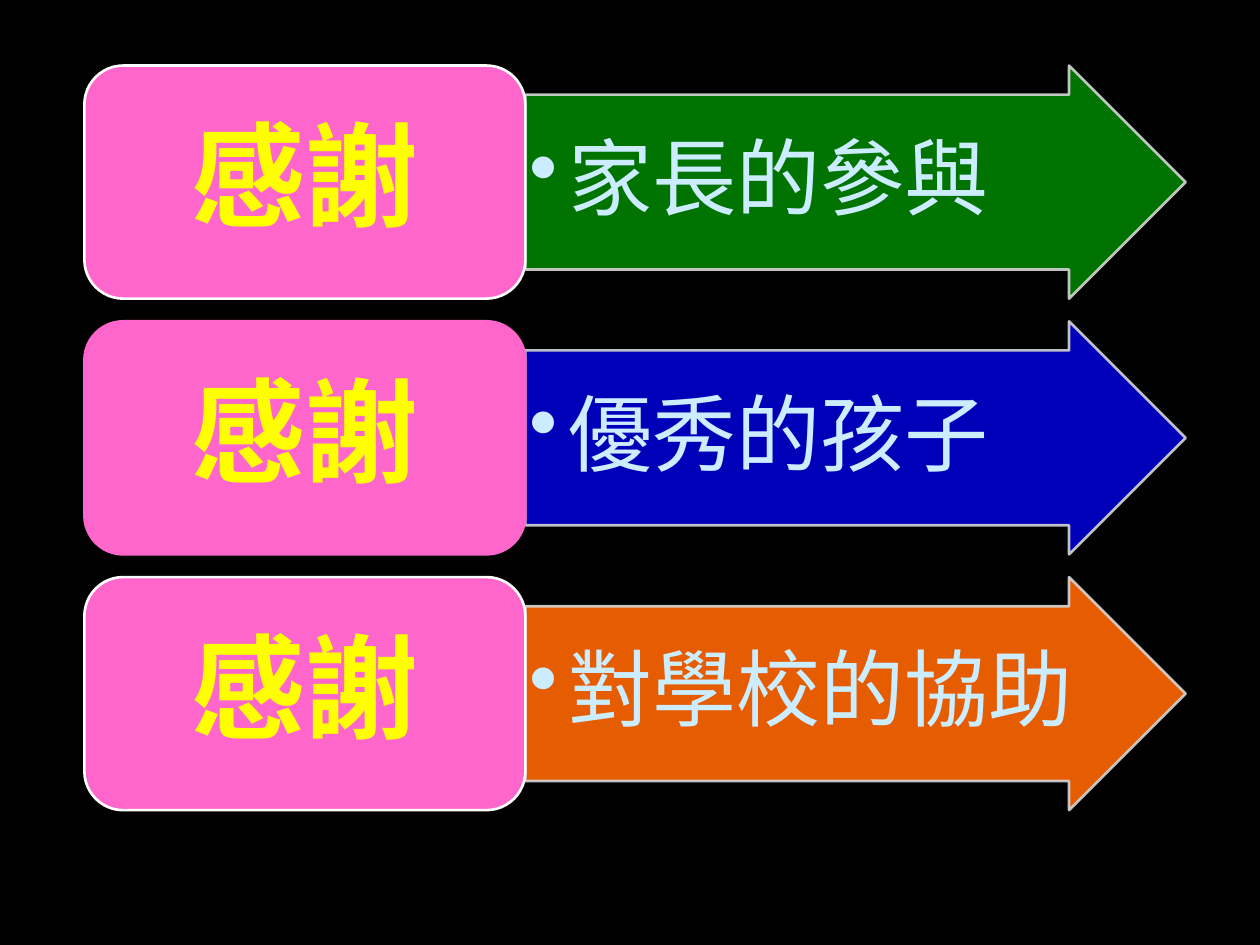
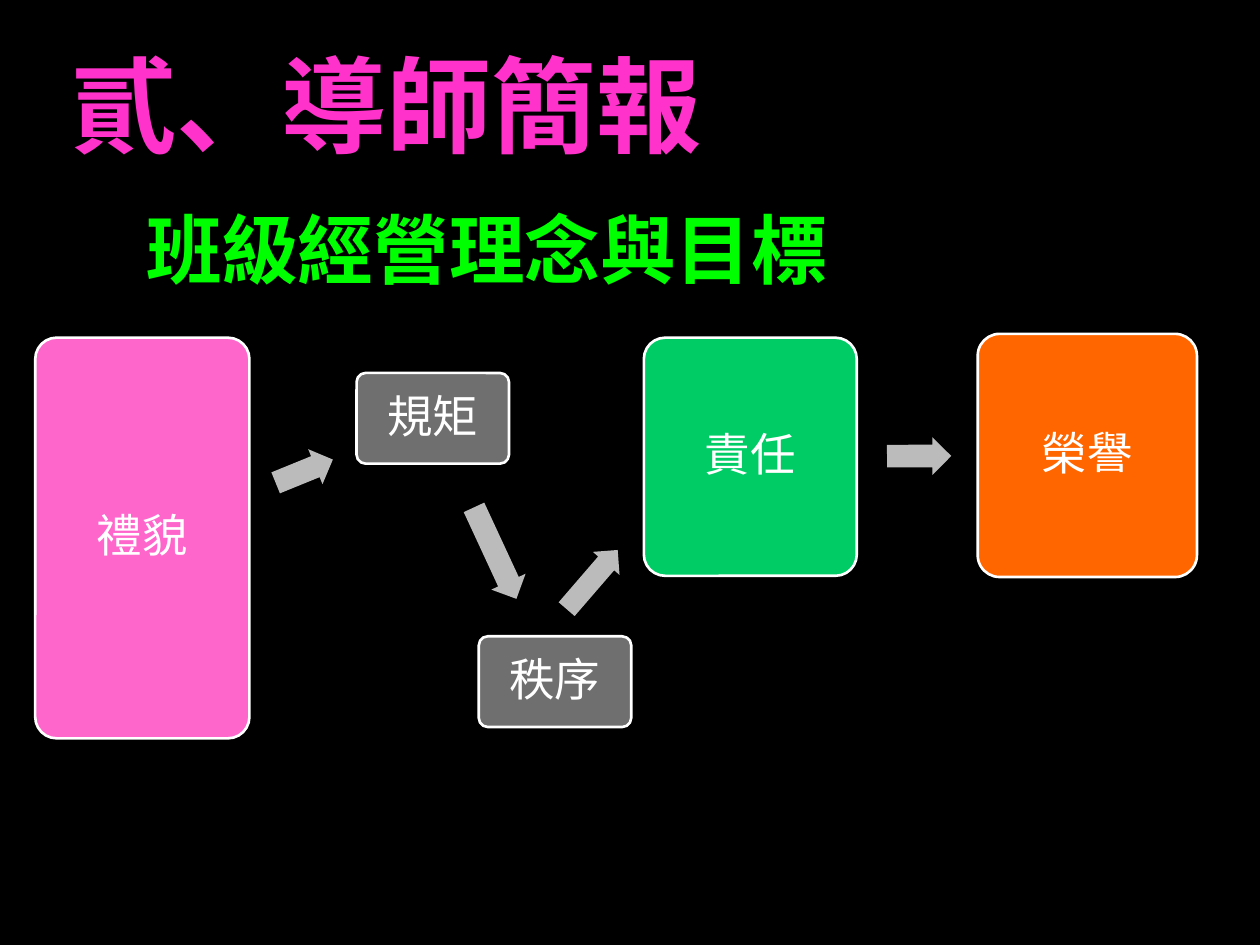
from dataclasses import dataclass

from lxml.etree import SubElement
from pptx import Presentation
from pptx.dml.color import RGBColor
from pptx.enum.shapes import MSO_SHAPE as Preset
from pptx.enum.text import MSO_ANCHOR as Anchor, PP_ALIGN as Align
from pptx.oxml.ns import qn
from pptx.util import Inches, Pt

DECK_WIDTH, DECK_HEIGHT = Inches(10), Inches(7.5)
COLUMN, ROW = DECK_WIDTH / 100, DECK_HEIGHT / 75

LATIN_FONT, HAN_FONT = "League Spartan", "Noto Sans CJK SC"
BLACK, WHITE, YELLOW, PALE_BLUE = "000000", "FFFFFF", "FFFF00", "CCECFF"
PINK, MAGENTA, LIME, MINT, ORANGE = "FF66CC", "FF33CC", "00FF00", "00CC66", "FF6600"
GREEN, BLUE, GREY, SILVER, PALE_GREY = "008000", "0000CC", "6F6F6F", "BBBBBB", "D5D5D5"


@dataclass(frozen=True)
class Area:
    column: float
    row: float
    columns: float
    rows: float

    def place(self) -> tuple[int, int, int, int]:
        return (round(self.column * COLUMN), round(self.row * ROW),
                round(self.columns * COLUMN), round(self.rows * ROW))


@dataclass(frozen=True)
class Thanks:
    text: str
    arrow_color: str
    card_line: str


@dataclass(frozen=True)
class Goal:
    text: str
    area: Area
    color: str


@dataclass(frozen=True)
class Step:
    area: Area
    angle: float


THANKS = [
    Thanks("家長的參與", GREEN, WHITE),
    Thanks("優秀的孩子", BLUE, PINK),
    Thanks("對學校的協助", ORANGE, WHITE),
]
FIRST_ROW, ROW_PITCH, BAND_ROWS = 5.2, 20.3, 18.5
CARD_COLUMN, CARD_COLUMNS, ARROW_COLUMNS = 6.7, 35, 52.4

GOALS = [
    Goal("禮貌", Area(2.8, 26.8, 17, 31.8), PINK),
    Goal("規矩", Area(28.3, 29.6, 12.1, 7.2), GREY),
    Goal("秩序", Area(38, 50.5, 12.1, 7.2), GREY),
    Goal("責任", Area(51.1, 26.8, 16.9, 18.9), MINT),
    Goal("榮譽", Area(77.6, 26.5, 17.4, 19.3), ORANGE),
]
STEPS = [
    Step(Area(21.7, 35.9, 4.9, 3), 337.8),
    Step(Area(35.3, 42.4, 8, 3), 65.1),
    Step(Area(43.9, 44.6, 6.2, 2.8), 310.8),
    Step(Area(70.4, 34.7, 5.1, 3), 359.8),
]


def paint(target, color: str, alpha: int = 100) -> None:
    target.solid()
    target.fore_color.rgb = RGBColor.from_string(color)
    if alpha < 100:
        for tone in target._xPr.iter(qn("a:srgbClr")):
            SubElement(tone, qn("a:alpha"), val=str(alpha * 1000))


def add_preset(slide, preset, area: Area, color: str, *, line: str = "",
               alpha: int = 100, adjustments: tuple = (), angle: float = 0):
    shape = slide.shapes.add_shape(preset, *area.place())
    shape.shadow.inherit = False
    shape.rotation = angle
    for index, value in enumerate(adjustments):
        shape.adjustments[index] = value
    paint(shape.fill, color, alpha)
    if line:
        shape.line.width = Pt(1.5)
        paint(shape.line.fill, line, alpha)
    else:
        shape.line.fill.background()
    return shape


def write(box, text: str, *, size: float, color: str, font: str = LATIN_FONT,
          bold: bool = False, small_caps: bool = False, align=Align.CENTER,
          anchor=Anchor.MIDDLE, insets: tuple = (0.1, 0.05, 0.1, 0.05),
          line_spacing: float = 1, after_share: int = 0, bullet: str = "") -> None:
    frame = box.text_frame
    frame.word_wrap = True
    frame.vertical_anchor = anchor
    (frame.margin_left, frame.margin_top,
     frame.margin_right, frame.margin_bottom) = map(Inches, insets)
    para = frame.paragraphs[0]
    para.alignment = align
    para.line_spacing = line_spacing
    para.space_after = Pt(0)
    properties = para._p.get_or_add_pPr()
    if after_share:
        after = properties.find(qn("a:spcAft"))
        after.clear()
        SubElement(after, qn("a:spcPct"), val=str(after_share * 1000))
    if bullet:
        para.level = 1
        properties.set("marL", str(Inches(0.31)))
        properties.set("indent", str(-Inches(0.31)))
        SubElement(properties, qn("a:buChar"), char=bullet)
    span = para.add_run()
    span.text = text
    span.font.size = Pt(size)
    span.font.bold = bold
    span.font.name = font
    paint(span.font.fill, color)
    span_properties = span._r.get_or_add_rPr()
    SubElement(span_properties, qn("a:ea"), typeface=font)
    if small_caps:
        span_properties.set("cap", "small")


def add_thanks(slide, thanks: Thanks, row: float) -> None:
    arrow_area = Area(CARD_COLUMN + CARD_COLUMNS, row, ARROW_COLUMNS, BAND_ROWS)
    arrow = add_preset(slide, Preset.RIGHT_ARROW, arrow_area, thanks.arrow_color,
                       line=PALE_GREY, alpha=90, adjustments=(0.75, 0.5))
    write(arrow, thanks.text, size=48, color=PALE_BLUE, align=Align.LEFT,
          insets=(0.03,) * 4, line_spacing=0.9, after_share=15, bullet="•")
    card_area = Area(CARD_COLUMN, row, CARD_COLUMNS, BAND_ROWS)
    card = add_preset(slide, Preset.ROUNDED_RECTANGLE, card_area, PINK,
                      line=thanks.card_line)
    write(card, "感謝", size=65, color=YELLOW, font=HAN_FONT, bold=True,
          insets=(0.27, 0.14, 0.27, 0.14), line_spacing=0.9, after_share=35)


def add_goal(slide, goal: Goal) -> None:
    card = add_preset(slide, Preset.ROUNDED_RECTANGLE, goal.area, goal.color,
                      line=WHITE, adjustments=(0.1,))
    write(card, goal.text, size=26, color=WHITE, insets=(0.11,) * 4,
          line_spacing=0.9, after_share=35)


def add_heading(slide, text: str, area: Area, **style) -> None:
    write(slide.shapes.add_textbox(*area.place()), text, bold=True, **style)


def build_thanks_slide(slide) -> None:
    for index, thanks in enumerate(THANKS):
        add_thanks(slide, thanks, FIRST_ROW + index * ROW_PITCH)


def build_goals_slide(slide) -> None:
    add_heading(slide, "貳、導師簡報", Area(2.8, 0.6, 55.8, 13.1),
                size=60, color=MAGENTA, anchor=Anchor.BOTTOM)
    add_heading(slide, "班級經營理念與目標", Area(2.5, 14, 73.6, 10.2),
                size=54, color=LIME, small_caps=True, insets=(0.1, 0.05, 0.23, 0.05))
    for goal in GOALS:
        add_goal(slide, goal)
    for step in STEPS:
        add_preset(slide, Preset.RIGHT_ARROW, step.area, SILVER,
                   adjustments=(0.6, 0.5), angle=step.angle)


def main() -> None:
    deck = Presentation()
    deck.slide_width, deck.slide_height = DECK_WIDTH, DECK_HEIGHT
    paint(deck.slide_master.background.fill, BLACK)
    blank = deck.slide_layouts[6]
    for build in (build_thanks_slide, build_goals_slide):
        build(deck.slides.add_slide(blank))
    deck.save("out.pptx")


if __name__ == "__main__":
    main()
